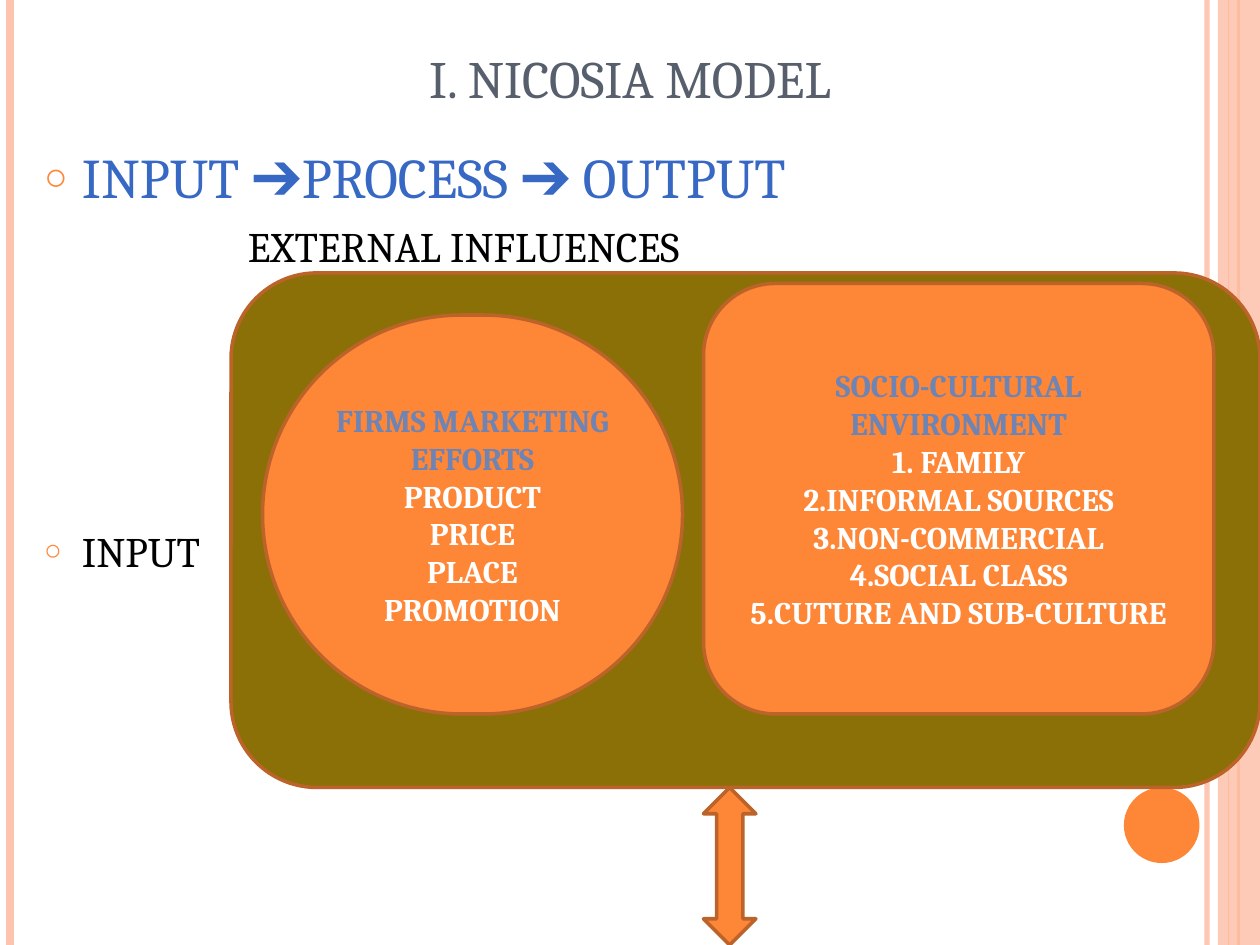
from dataclasses import dataclass
from typing import Optional

from lxml.etree import SubElement
from pptx import Presentation
from pptx.dml.color import RGBColor
from pptx.enum.shapes import MSO_CONNECTOR, MSO_SHAPE
from pptx.enum.text import MSO_ANCHOR, MSO_AUTO_SIZE, PP_ALIGN
from pptx.oxml.ns import qn
from pptx.util import Pt

FONT = "Cambria"
PAGE_WIDTH, PAGE_HEIGHT = 720, 540
COLORS = {
    "orange": "FE8637",
    "peach": "FEC3AE",
    "olive": "8A7007",
    "outline": "BC6329",
    "title": "575F6D",
    "blue": "3668C4",
    "heading": "6E84B4",
    "black": "000000",
    "white": "FFFFFF",
}


@dataclass(frozen=True)
class Stripe:
    x: float
    color: str
    width: float
    opacity: int = 100


@dataclass(frozen=True)
class Block:
    kind: MSO_SHAPE
    left: float
    top: float
    width: float
    height: float
    fill: str = "orange"
    outline: Optional[str] = "outline"
    opacity: int = 100
    rounding: Optional[float] = None
    lines: tuple[str, ...] = ()


@dataclass(frozen=True)
class BodyLine:
    text: str
    size: float
    color: str
    bullet: bool = True
    indent: float = 21.6
    space_before: float = 6


STRIPES = (
    Stripe(689.76, "peach", 3, 93),
    Stripe(5.76, "peach", 4.5),
    Stripe(707.76, "orange", 1.5),
    Stripe(702, "orange", 0.75),
)
DECORATIONS = (
    Block(MSO_SHAPE.RECTANGLE, 696, 0, 24, PAGE_HEIGHT, "peach", None, 87),
    Block(MSO_SHAPE.OVAL, 642.24, 450, 43.2, 43.2, outline=None),
)
DIAGRAM = (
    Block(MSO_SHAPE.ROUNDED_RECTANGLE, 132, 156, 588, 294, "olive"),
    Block(MSO_SHAPE.ROUNDED_RECTANGLE, 150, 180, 240, 228, rounding=0.5, lines=(
        "FIRMS MARKETING EFFORTS", "PRODUCT", "PRICE", "PLACE", "PROMOTION")),
    Block(MSO_SHAPE.ROUNDED_RECTANGLE, 402, 162, 291.6, 246, lines=(
        "SOCIO-CULTURAL ENVIRONMENT", "1. FAMILY", "2.INFORMAL SOURCES",
        "3.NON-COMMERCIAL", "4.SOCIAL CLASS", "5.CUTURE AND SUB-CULTURE")),
    Block(MSO_SHAPE.UP_DOWN_ARROW, 402, 450, 30, 90),
)
BODY = (
    BodyLine("INPUT ➔PROCESS ➔ OUTPUT", 32, "blue"),
    BodyLine("EXTERNAL INFLUENCES", 24, "black", bullet=False, indent=116.5),
    BodyLine("INPUT", 24, "black", space_before=145.5),
)


def rgb(name: str) -> RGBColor:
    return RGBColor.from_string(COLORS[name])


def set_opacity(element, percent: int) -> None:
    if percent < 100:
        color = next(element.iter(qn("a:srgbClr")))
        SubElement(color, qn("a:alpha"), val=str(percent * 1000))


def set_font(paragraph, size: float, color: str, bold: bool = False) -> None:
    font = paragraph.font
    font.name, font.size, font.bold = FONT, Pt(size), bold
    font.color.rgb = rgb(color)


def set_bullet(paragraph, line: BodyLine) -> None:
    properties = paragraph._p.get_or_add_pPr()
    properties.set("marL", str(Pt(line.indent)))
    properties.set("indent", str(Pt(-21.6 if line.bullet else 0)))
    if not line.bullet:
        SubElement(properties, qn("a:buNone"))
        return
    color = SubElement(properties, qn("a:buClr"))
    SubElement(color, qn("a:srgbClr"), val=COLORS["orange"])
    SubElement(properties, qn("a:buSzPct"), val="70000")
    SubElement(properties, qn("a:buChar"), char="○")


def draw_stripe(page, stripe: Stripe) -> None:
    line = page.shapes.add_connector(
        MSO_CONNECTOR.STRAIGHT, Pt(stripe.x), 0, Pt(stripe.x), Pt(PAGE_HEIGHT))
    line.line.color.rgb = rgb(stripe.color)
    line.line.width = Pt(stripe.width)
    properties = line._element.spPr
    set_opacity(properties, stripe.opacity)
    SubElement(properties, qn("a:effectLst"))


def draw_block(page, block: Block) -> None:
    shape = page.shapes.add_shape(
        block.kind, Pt(block.left), Pt(block.top), Pt(block.width), Pt(block.height))
    shape.shadow.inherit = False
    shape.fill.solid()
    shape.fill.fore_color.rgb = rgb(block.fill)
    set_opacity(shape._element.spPr, block.opacity)
    if block.outline:
        shape.line.color.rgb = rgb(block.outline)
        shape.line.width = Pt(2)
    else:
        shape.line.fill.background()
    if block.rounding is not None:
        shape.adjustments[0] = block.rounding
    if block.lines:
        frame = shape.text_frame
        frame.text = "\n".join(block.lines)
        frame.vertical_anchor = MSO_ANCHOR.MIDDLE
        for number, paragraph in enumerate(frame.paragraphs):
            paragraph.alignment = PP_ALIGN.CENTER
            set_font(paragraph, 18, "white" if number else "heading", bold=True)


def place(page, holder, left: float, top: float, width: float, height: float) -> None:
    """Move a placeholder to its position and in front of what is drawn so far."""
    holder.left, holder.top = Pt(left), Pt(top)
    holder.width, holder.height = Pt(width), Pt(height)
    holder.text_frame.auto_size = MSO_AUTO_SIZE.NONE
    page.shapes._spTree.append(holder._element)


def fill_title(page) -> None:
    title = page.shapes.title
    place(page, title, 36, 0, 648, 66)
    frame = title.text_frame
    frame.text = "I. NICOSIA MODEL"
    frame.vertical_anchor = MSO_ANCHOR.BOTTOM
    paragraph = frame.paragraphs[0]
    paragraph.alignment = PP_ALIGN.CENTER
    set_font(paragraph, 30, "title")


def fill_body(page) -> None:
    body = page.placeholders[1]
    place(page, body, 18, 78, 702, 462)
    frame = body.text_frame
    frame.text = "\n".join(line.text for line in BODY)
    for paragraph, line in zip(frame.paragraphs, BODY):
        set_bullet(paragraph, line)
        paragraph.space_before = Pt(line.space_before)
        set_font(paragraph, line.size, line.color)


def main() -> None:
    deck = Presentation()
    deck.slide_width, deck.slide_height = Pt(PAGE_WIDTH), Pt(PAGE_HEIGHT)
    page = deck.slides.add_slide(deck.slide_layouts[1])
    for stripe in STRIPES:
        draw_stripe(page, stripe)
    for decoration in DECORATIONS:
        draw_block(page, decoration)
    fill_title(page)
    fill_body(page)
    for block in DIAGRAM:
        draw_block(page, block)
    deck.save("out.pptx")


if __name__ == "__main__":
    main()
